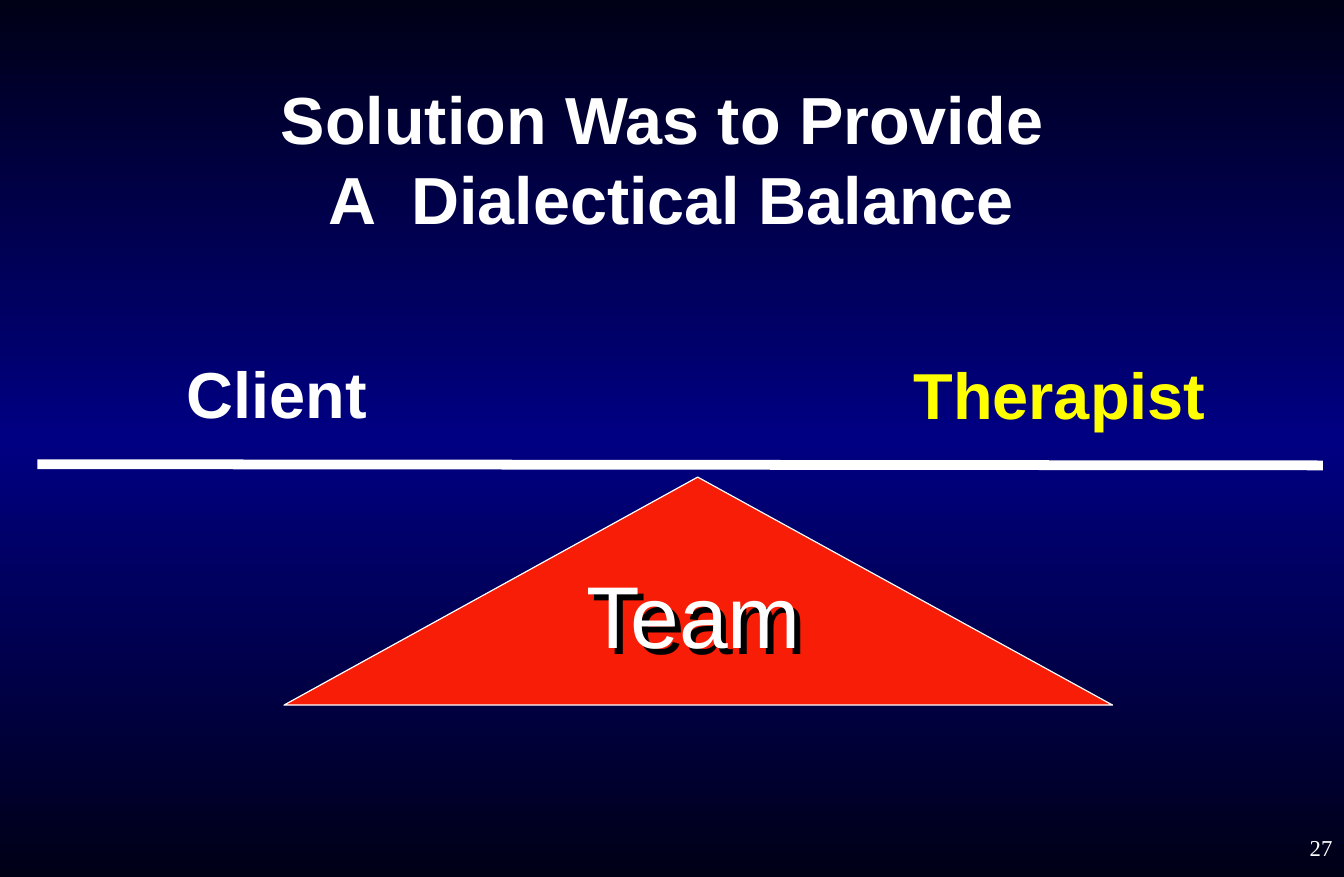
from pptx import Presentation
from pptx.dml.color import RGBColor
from pptx.enum.shapes import MSO_CONNECTOR
from pptx.enum.text import MSO_ANCHOR, PP_ALIGN
from pptx.oxml import parse_xml
from pptx.oxml.ns import nsdecls, qn
from pptx.util import Pt
from lxml.etree import SubElement

PX = 9144  # 100 px to the inch
SIZE = (1150, 750)
HEX = {"white": "FFFFFF", "yellow": "FFFF00", "red": "F71D06",
       "night": "000017", "navy": "000082", "black": "000000"}

LABELS = [
    ("Solution Was to Provide \vA  Dialectical Balance", (0, 67, 1150, 136),
     dict(size=41, bold=True, align=PP_ALIGN.CENTER, mid=True, lead=Pt(49), glow=3)),
    ("Therapist", (719, 306, 375, 71),
     dict(size=40, bold=True, color="yellow", align=PP_ALIGN.CENTER,
          lead=0.9, before=4, glow=3)),
    ("Client", (150, 316, 349, 57), dict(size=40, bold=True, lead=0.7, before=4)),
    ("Team", (492, 475, 247, 101), dict(size=54, before=5, cast=7)),
    ("27", (910, 700, 240, 50),
     dict(size=14, font="Times New Roman", align=PP_ALIGN.RIGHT, mid=True)),
]
BEAM = (32, 397, 1132, 398)
WEDGE = [(597, 408), (952, 603), (243, 603)]
STOPS = [(0, "night"), (50, "navy"), (100, "night")]


def rgb(name):
    return RGBColor.from_string(HEX[name])


def shade(dist):
    """Effect list with a hard black shadow to the lower right."""
    return parse_xml(
        f'<a:effectLst {nsdecls("a")}><a:outerShdw blurRad="0" dist="{dist * PX}" '
        f'dir="2700000" algn="tl" rotWithShape="0"><a:srgbClr val="{HEX["black"]}"/>'
        '</a:outerShdw></a:effectLst>')


def paint(slide):
    """Give the slide its vertical gradient."""
    stops = "".join(f'<a:gs pos="{pos * 1000}"><a:srgbClr val="{HEX[name]}"/></a:gs>'
                    for pos, name in STOPS)
    slide.element.cSld.insert(0, parse_xml(
        f'<p:bg {nsdecls("p", "a")}><p:bgPr><a:gradFill rotWithShape="0">'
        f'<a:gsLst>{stops}</a:gsLst><a:lin ang="5400000" scaled="0"/></a:gradFill>'
        '<a:effectLst/></p:bgPr></p:bg>'))


def write(slide, text, place, size, color="white", font="Arial", bold=False,
          align=PP_ALIGN.LEFT, mid=False, lead=None, before=0, glow=0, cast=0):
    """Add a label; glow shades its letters, cast shades the whole box."""
    box = slide.shapes.add_textbox(*(n * PX for n in place))
    frame = box.text_frame
    frame.word_wrap = True
    frame.vertical_anchor = MSO_ANCHOR.MIDDLE if mid else MSO_ANCHOR.TOP
    para = frame.paragraphs[0]
    para.text = text
    para.alignment = align
    para.line_spacing = lead
    para.space_before = Pt(before)
    for run in para.runs:
        face = run.font
        face.size, face.bold, face.name = Pt(size), bold, font
        face.color.rgb = rgb(color)
        if glow:
            run.font.fill  # fill precedes effects in the run format
            run._r.rPr.find(qn("a:solidFill")).addnext(shade(glow))
    for gap in para._p.findall(qn("a:br")):
        SubElement(gap, qn("a:rPr")).set("sz", str(size * 100))
    if cast:
        box._element.spPr.append(shade(cast))


def wedge(slide):
    pen = slide.shapes.build_freeform(*WEDGE[0], scale=PX)
    pen.add_line_segments(WEDGE[1:], close=True)
    shape = pen.convert_to_shape()
    shape.shadow.inherit = False
    shape.fill.solid()
    shape.fill.fore_color.rgb = rgb("red")
    shape.line.color.rgb = rgb("white")
    shape.line.width = Pt(0.75)


def beam(slide):
    bar = slide.shapes.add_connector(MSO_CONNECTOR.STRAIGHT, *(n * PX for n in BEAM))
    bar.line.color.rgb = rgb("white")
    bar.line.width = Pt(6)
    SubElement(bar._element.spPr, qn("a:effectLst"))


def main():
    deck = Presentation()
    deck.slide_width, deck.slide_height = (n * PX for n in SIZE)
    slide = deck.slides.add_slide(deck.slide_layouts[6])
    paint(slide)
    wedge(slide)
    beam(slide)
    for text, place, style in LABELS:
        write(slide, text, place, **style)
    deck.save("out.pptx")


if __name__ == "__main__":
    main()
